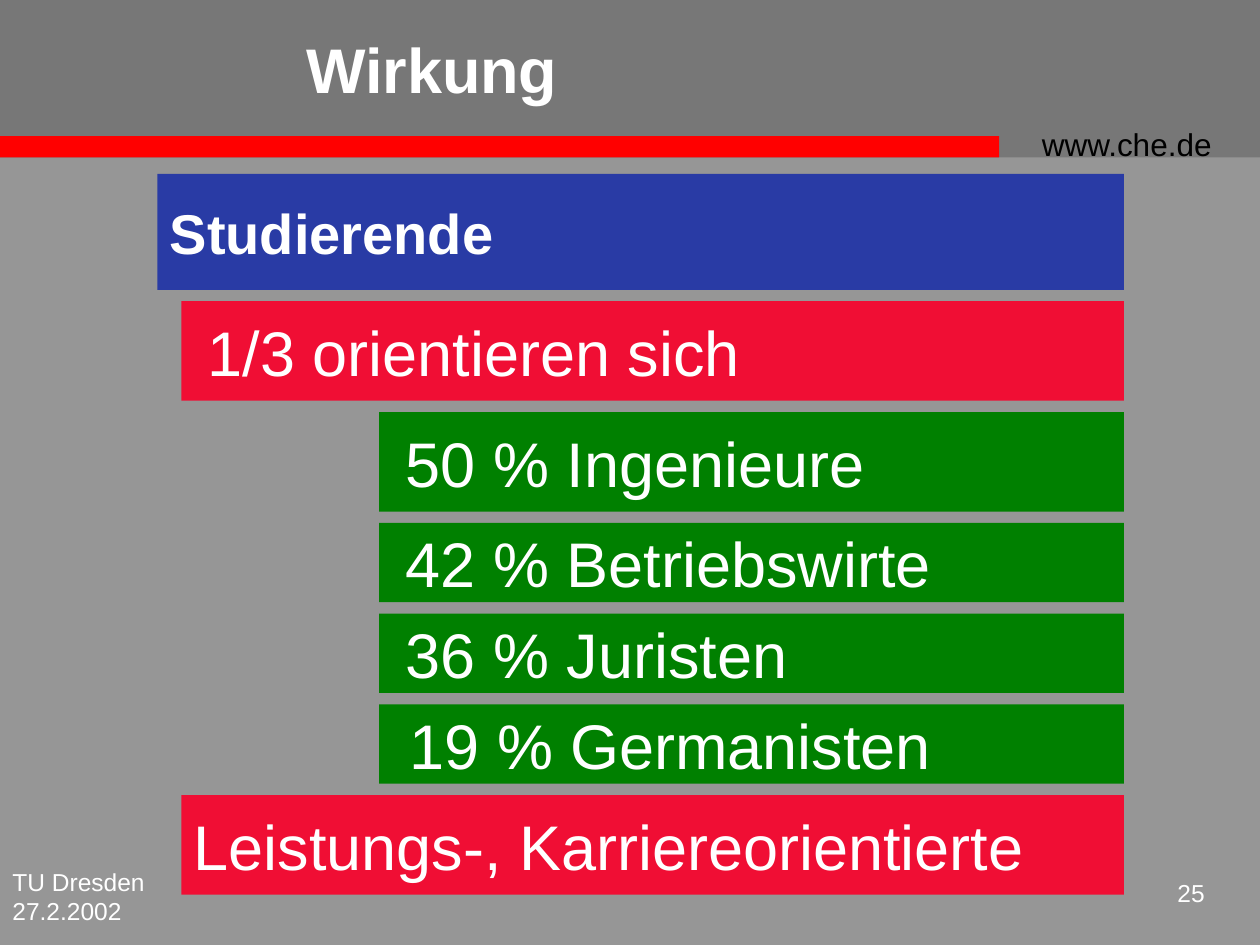
from pptx import Presentation
from pptx import util as u
from pptx.dml.color import RGBColor
from pptx.enum import shapes, text

COLOURS = {
    "page": "969696", "header": "777777", "stripe": "FF0000",
    "blue": "293BA5", "red": "F00E34", "green": "008000",
    "white": "FFFFFF", "black": "000000",
}
WIDTH, HEIGHT = 10, 7.5
HEADER_HEIGHT, STRIPE_HEIGHT = 1.25, 0.17

# Bars from top to bottom: wording, level, height, left inset
BARS = [
    ("Studierende", "topic", 0.92, 0.1),
    ("1/3 orientieren sich", "finding", 0.79, 0.21),
    ("50 % Ingenieure", "subject", 0.79, 0.21),
    ("42 % Betriebswirte", "subject", 0.63, 0.21),
    ("36 % Juristen", "subject", 0.63, 0.21),
    ("19 % Germanisten", "subject", 0.63, 0.24),
    ("Leistungs-, Karriereorientierte", "finding", 0.79, 0.1),
]
# Level: left edge, fill, text size, bold
LEVELS = {
    "topic": (1.25, "blue", 32, True),
    "finding": (1.44, "red", 36, False),
    "subject": (3.01, "green", 36, False),
}
BARS_TOP, BARS_RIGHT, BAR_GAP = 1.38, 8.92, 0.09

# Small texts: wording, place, size, colour, alignment
LABELS = [
    ("www.che.de", (8.17, 0.94, 1.75, 0.4), 18, "black", text.PP_ALIGN.LEFT),
    ("TU Dresden 27.2.2002", (0, 6.83, 2.08, 0.5), 14, "white", text.PP_ALIGN.LEFT),
    ("25", (9.08, 6.92, 0.58, 0.42), 14, "white", text.PP_ALIGN.RIGHT),
]


def colour(name):
    return RGBColor.from_string(COLOURS[name])


def inches(place):
    return [u.Inches(length) for length in place]


def write(box, wording, size, ink="white", bold=False,
          align=text.PP_ALIGN.LEFT, anchor=text.MSO_ANCHOR.MIDDLE):
    frame = box.text_frame
    frame.text = wording
    frame.word_wrap = True
    frame.auto_size = text.MSO_AUTO_SIZE.NONE
    frame.vertical_anchor = anchor
    para = frame.paragraphs[0]
    para.alignment = align
    font = para.runs[0].font
    font.name, font.size, font.bold = "Arial", u.Pt(size), bold
    font.color.rgb = colour(ink)


def add_bar(page, place, fill):
    bar = page.shapes.add_shape(shapes.MSO_SHAPE.RECTANGLE, *inches(place))
    bar.shadow.inherit = False
    bar.fill.solid()
    bar.fill.fore_color.rgb = colour(fill)
    bar.line.fill.background()
    return bar


def main():
    deck = Presentation()
    deck.slide_width, deck.slide_height = inches((WIDTH, HEIGHT))
    page = deck.slides.add_slide(deck.slide_layouts[5])
    page.background.fill.solid()
    page.background.fill.fore_color.rgb = colour("page")

    # Header band and stripe
    add_bar(page, (0, 0, WIDTH, HEADER_HEIGHT), "header")
    add_bar(page, (0, HEADER_HEIGHT - STRIPE_HEIGHT, 7.93, STRIPE_HEIGHT), "stripe")

    # Web address, footer and page number
    for wording, place, size, ink, align in LABELS:
        label = page.shapes.add_textbox(*inches(place))
        write(label, wording, size, ink, align=align, anchor=text.MSO_ANCHOR.TOP)

    # Stack of bars, all ending at the same right edge
    top = BARS_TOP
    for wording, level, height, inset in BARS:
        left, fill, size, bold = LEVELS[level]
        bar = add_bar(page, (left, top, BARS_RIGHT - left, height), fill)
        write(bar, wording, size, bold=bold)
        bar.text_frame.margin_left = u.Inches(inset)
        top += height + BAR_GAP

    # Title, brought in front of the header band
    title = page.shapes.title
    title.left, title.top, title.width, title.height = inches((2.33, 0, 5.5, 1.08))
    write(title, "Wirkung", 36, bold=True)
    page.shapes.element.append(title.element)

    deck.save("out.pptx")


if __name__ == "__main__":
    main()
